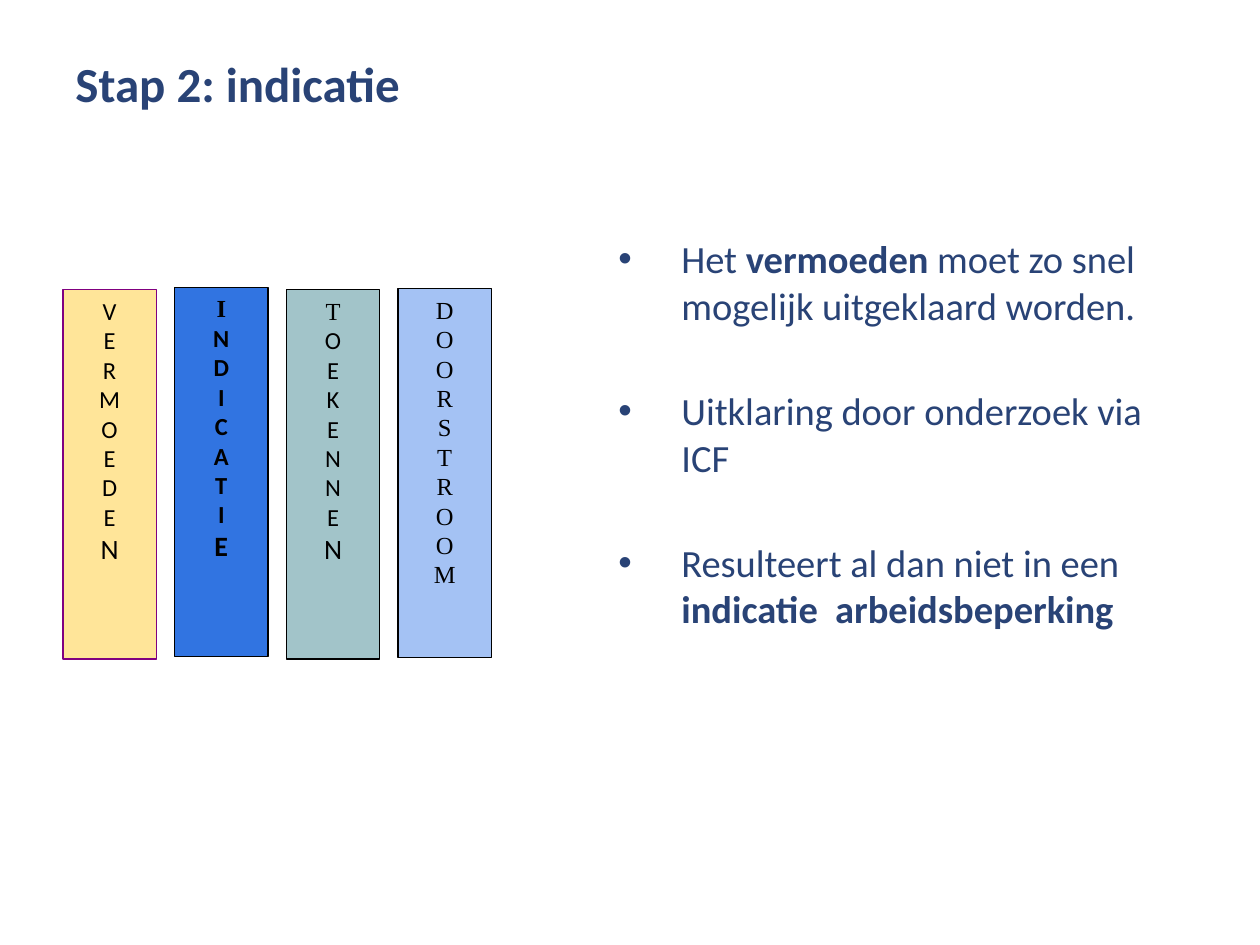
from dataclasses import dataclass
from lxml.etree import SubElement
from pptx import Presentation
from pptx.dml.color import RGBColor
from pptx.enum.shapes import MSO_SHAPE
from pptx.enum.text import MSO_ANCHOR, PP_ALIGN
from pptx.oxml.ns import qn
from pptx.util import Inches, Pt


@dataclass(frozen=True)
class Theme:
    ink: str = "294376"
    black: str = "000000"
    purple: str = "800080"
    sans: str = "Calibri"
    serif: str = "Times New Roman"
    title: int = 28
    body: int = 22
    letter: int = 14
    last: int = 16


THEME = Theme()


@dataclass(frozen=True)
class Run:
    text: str
    bold: bool = False
    font: str = THEME.sans
    size: int = THEME.body


@dataclass(frozen=True)
class Pillar:
    word: str
    fill: str
    top: float
    line: str = THEME.black
    first: str = THEME.serif
    rest: str = THEME.sans
    last: int = THEME.last
    bold: bool = False

    def runs(self) -> list[list[Run]]:
        end = len(self.word) - 1
        return [
            [Run(char, self.bold, self.rest if i else self.first,
                 self.last if i == end else THEME.letter)]
            for i, char in enumerate(self.word)
        ]


PILLARS = [
    Pillar("VERMOEDEN", "FFE599", 2.3, line=THEME.purple, first=THEME.sans),
    Pillar("INDICATIE", "3174E1", 2.28, bold=True),
    Pillar("TOEKENNEN", "A2C4C9", 2.3),
    Pillar("DOORSTROOM", "A4C2F4", 2.29, rest=THEME.serif, last=THEME.letter),
]

POINTS = [
    [Run("Het "), Run("vermoeden", bold=True),
     Run(" moet zo snel mogelijk uitgeklaard worden.")],
    [Run("Uitklaring door onderzoek via ICF")],
    [Run("Resulteert al dan niet in een "),
     Run("indicatie  arbeidsbeperking", bold=True)],
]


def add_bullet(para, color: str) -> None:
    props = para._p.get_or_add_pPr()
    props.set("marL", str(Inches(0.5)))
    props.set("indent", str(-Inches(0.5)))
    tint = SubElement(props, qn("a:buClr"))
    SubElement(tint, qn("a:srgbClr")).set("val", color)
    SubElement(props, qn("a:buFont")).set("typeface", "Arial")
    SubElement(props, qn("a:buChar")).set("char", "•")


def write(shape, paras: list[list[Run]], *, color: str = THEME.ink,
          align=PP_ALIGN.LEFT, anchor=MSO_ANCHOR.TOP,
          bullet: bool = False, gap: float = 0) -> None:
    frame = shape.text_frame
    frame.word_wrap = True
    frame.vertical_anchor = anchor
    for i, runs in enumerate(paras):
        para = frame.add_paragraph() if i else frame.paragraphs[0]
        para.alignment = align
        if i and gap:
            para.space_before = Pt(gap)
        if bullet:
            add_bullet(para, color)
        for item in runs:
            run = para.add_run()
            run.text = item.text
            font = run.font
            font.name, font.size, font.bold = item.font, Pt(item.size), item.bold
            font.color.rgb = RGBColor.from_string(color)


def add_box(shapes, left: float, top: float, width: float, height: float):
    return shapes.add_textbox(
        Inches(left), Inches(top), Inches(width), Inches(height))


def add_pillar(shapes, pillar: Pillar, left: float) -> None:
    rect = shapes.add_shape(
        MSO_SHAPE.RECTANGLE, Inches(left), Inches(pillar.top),
        Inches(0.74), Inches(2.93))
    rect.shadow.inherit = False
    rect.fill.solid()
    rect.fill.fore_color.rgb = RGBColor.from_string(pillar.fill)
    rect.line.color.rgb = RGBColor.from_string(pillar.line)
    rect.line.width = Pt(0.75)
    write(rect, pillar.runs(), color=THEME.black, align=PP_ALIGN.CENTER)


def main() -> None:
    deck = Presentation()
    deck.slide_width, deck.slide_height = Inches(10), Inches(7.5)
    slide = deck.slides.add_slide(deck.slide_layouts[6])
    shapes = slide.shapes

    title = add_box(shapes, 0.5, 0.22, 6.58, 0.72)
    write(title, [[Run("Stap 2: indicatie", bold=True, size=THEME.title)]],
          anchor=MSO_ANCHOR.BOTTOM)

    body = add_box(shapes, 4.81, 1.82, 4.72, 3.56)
    write(body, POINTS, bullet=True, gap=34)

    group = shapes.add_group_shape()
    step = (3.16 - 0.5) / (len(PILLARS) - 1)
    for i, pillar in enumerate(PILLARS):
        add_pillar(group.shapes, pillar, 0.5 + i * step)

    deck.save("out.pptx")


if __name__ == "__main__":
    main()
